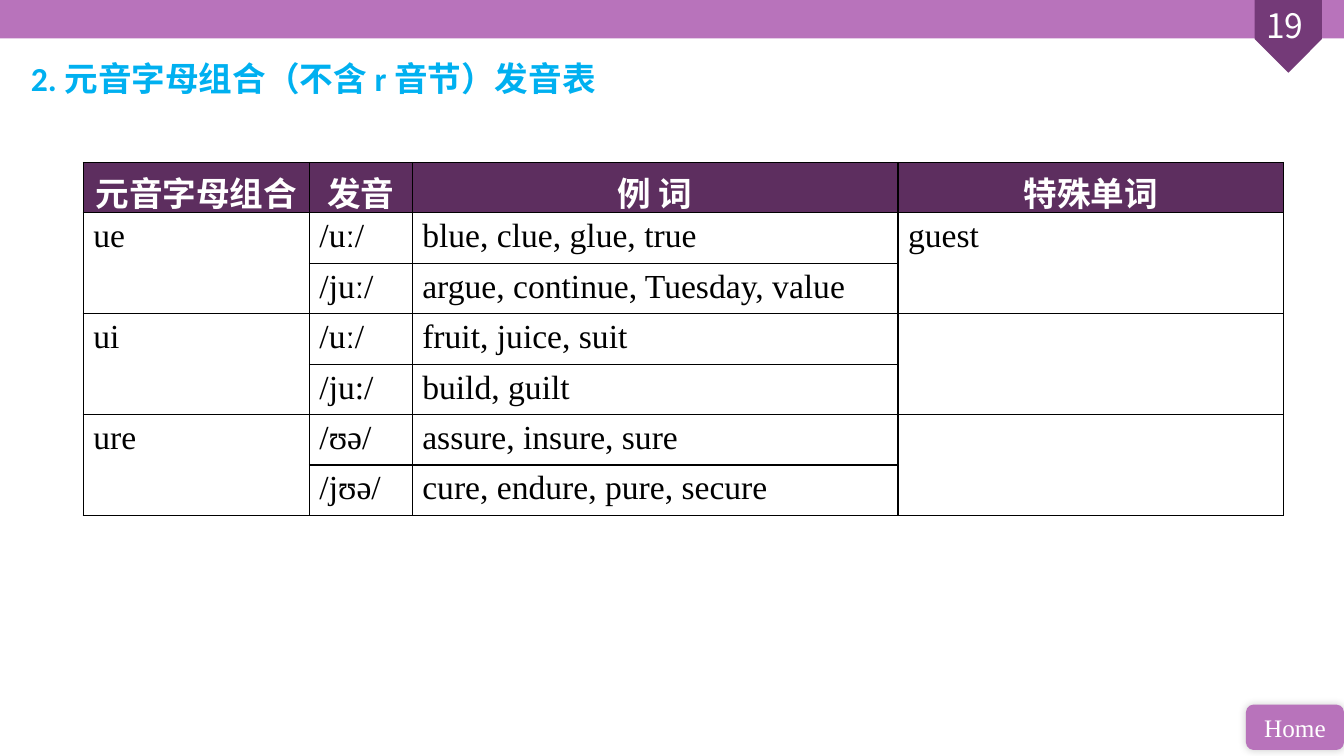
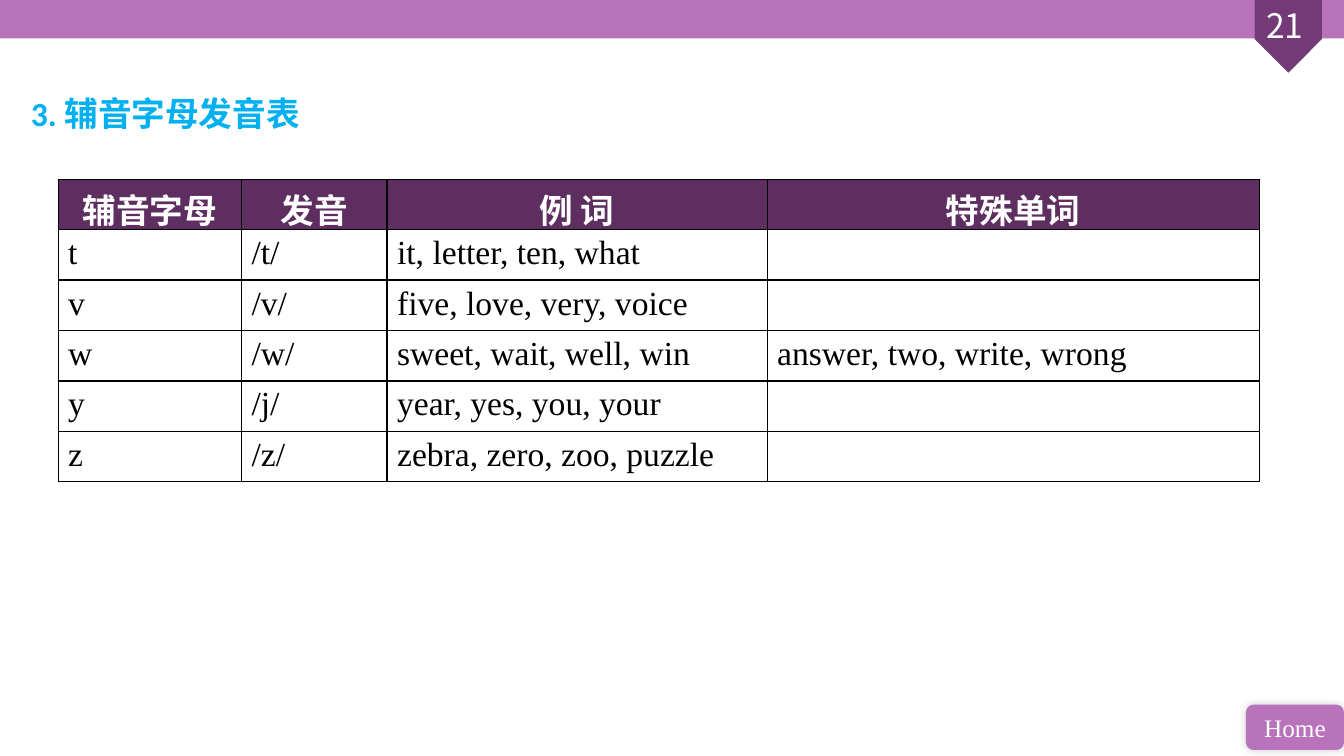
from dataclasses import dataclass

from lxml.etree import SubElement
from pptx import Presentation
from pptx.dml.color import RGBColor
from pptx.enum.shapes import MSO_SHAPE
from pptx.enum.text import MSO_ANCHOR, PP_ALIGN
from pptx.oxml.ns import qn
from pptx.shapes.autoshape import Shape
from pptx.slide import Slide
from pptx.table import _Cell
from pptx.text.text import TextFrame
from pptx.util import Pt

COLORS = {
    "band": "B873BB",
    "marker": "743A78",
    "header": "5D2E5F",
    "title": "00B0F0",
    "white": "FFFFFF",
    "black": "000000",
}
SERIF = "Times New Roman"
SANS = "Calibri"
CHINESE = "Noto Sans CJK SC"
ROW_HEIGHT = 36
MERGED = None  # the cell belongs to the one above it


@dataclass(frozen=True)
class SoundPage:
    number: str
    title: str
    title_top: float
    table_left: float
    table_top: float
    column_widths: tuple[float, ...]
    rows: tuple[tuple[str | None, ...], ...]


PAGES = (
    SoundPage(
        "19", "2. 元音字母组合（不含 r 音节）发音表", 38, 59.5, 116,
        (161.5, 73.5, 347, 275.5),
        (
            ("元音字母组合", "发音", "例 词", "特殊单词"),
            ("ue", "/uː/", "blue, clue, glue, true", "guest"),
            (MERGED, "/juː/", "argue, continue, Tuesday, value", MERGED),
            ("ui", "/uː/", "fruit, juice, suit", ""),
            (MERGED, "/ju:/", "build, guilt", MERGED),
            ("ure", "/ʊə/", "assure, insure, sure", ""),
            (MERGED, "/jʊə/", "cure, endure, pure, secure", MERGED),
        ),
    ),
    SoundPage(
        "21", "3. 辅音字母发音表", 62.5, 41.5, 128,
        (131, 104, 271.5, 351.5),
        (
            ("辅音字母", "发音", "例 词", "特殊单词"),
            ("t", "/t/", "it, letter, ten, what", ""),
            ("v", "/v/", "five, love, very, voice", ""),
            ("w", "/w/", "sweet, wait, well, win", "answer, two, write, wrong"),
            ("y", "/j/", "year, yes, you, your", ""),
            ("z", "/z/", "zebra, zero, zoo, puzzle", ""),
        ),
    ),
)


def rgb(color: str) -> RGBColor:
    return RGBColor.from_string(COLORS[color])


def write(frame: TextFrame, text: str, color: str, font: str = SERIF, size: float = 24,
          bold: bool = False, align: PP_ALIGN = PP_ALIGN.LEFT) -> None:
    frame.text = text
    para = frame.paragraphs[0]
    para.alignment = align
    for span in para.runs:
        span.font.name = font
        span.font.size = Pt(size)
        span.font.bold = bold
        span.font.color.rgb = rgb(color)
        east_asian = SubElement(span.font._element, qn("a:ea"))
        east_asian.set("typeface", CHINESE)


def add_block(page: Slide, kind: MSO_SHAPE, color: str, left: float, top: float,
              width: float, height: float) -> Shape:
    block = page.shapes.add_shape(kind, Pt(left), Pt(top), Pt(width), Pt(height))
    block.fill.solid()
    block.fill.fore_color.rgb = rgb(color)
    block.line.fill.background()
    block.shadow.inherit = False
    return block


def add_text_box(page: Slide, left: float, top: float, width: float) -> TextFrame:
    frame = page.shapes.add_textbox(Pt(left), Pt(top), Pt(width), Pt(36)).text_frame
    frame.word_wrap = True
    return frame


def add_soft_shadow(block: Shape) -> None:
    effects = block._element.spPr.find(qn("a:effectLst"))
    shadow = SubElement(effects, qn("a:outerShdw"), blurRad=str(Pt(6)), dist="0",
                        dir=str(315 * 60000), rotWithShape="0")
    tint = SubElement(shadow, qn("a:srgbClr"), val=COLORS["black"])
    SubElement(tint, qn("a:alpha"), val="20000")


def add_frame(page: Slide, number: str) -> None:
    """Draw the top band, the page marker and the Home button."""
    add_block(page, MSO_SHAPE.RECTANGLE, "band", 0, 0, 960, 27.4)
    marker = add_block(page, MSO_SHAPE.PENTAGON, "marker", 894.2, 2, 52, 48)
    marker.rotation = 90
    write(add_text_box(page, 882.5, 0, 70.5), number, "white", CHINESE,
          align=PP_ALIGN.CENTER)
    button = add_block(page, MSO_SHAPE.ROUNDED_RECTANGLE, "band", 890, 503.3, 70, 32.4)
    add_soft_shadow(button)
    button.text_frame.vertical_anchor = MSO_ANCHOR.MIDDLE
    write(button.text_frame, "Home", "white", size=18, align=PP_ALIGN.CENTER)


def add_borders(cell: _Cell) -> None:
    properties = cell._tc.get_or_add_tcPr()
    for index, side in enumerate(("lnL", "lnR", "lnT", "lnB")):
        line = SubElement(properties, qn(f"a:{side}"), w=str(Pt(1)))
        fill = SubElement(line, qn("a:solidFill"))
        SubElement(fill, qn("a:srgbClr"), val=COLORS["black"])
        properties.insert(index, line)


def format_cell(cell: _Cell, text: str, is_header: bool) -> None:
    if is_header:
        cell.fill.solid()
        cell.fill.fore_color.rgb = rgb("header")
        cell.vertical_anchor = MSO_ANCHOR.MIDDLE
        cell.margin_bottom = 0
        write(cell.text_frame, text, "white", bold=True, align=PP_ALIGN.CENTER)
    else:
        cell.fill.background()
        write(cell.text_frame, text, "black")
    add_borders(cell)


def add_sound_table(page: Slide, content: SoundPage) -> None:
    rows, widths = content.rows, content.column_widths
    table = page.shapes.add_table(
        len(rows), len(widths), Pt(content.table_left), Pt(content.table_top),
        Pt(sum(widths)), Pt(ROW_HEIGHT * len(rows))).table
    for column, width in zip(table.columns, widths):
        column.width = Pt(width)
    for row_index, texts in enumerate(rows):
        table.rows[row_index].height = Pt(ROW_HEIGHT)
        for column_index, text in enumerate(texts):
            cell = table.cell(row_index, column_index)
            format_cell(cell, text or "", row_index == 0)
            if text is MERGED:
                table.cell(row_index - 1, column_index).merge(cell)


def main() -> None:
    deck = Presentation()
    deck.slide_width, deck.slide_height = Pt(960), Pt(540)
    for content in PAGES:
        page = deck.slides.add_slide(deck.slide_layouts[6])
        add_frame(page, content.number)
        write(add_text_box(page, 15, content.title_top, 883.5), content.title, "title",
              SANS, bold=True)
        add_sound_table(page, content)
    deck.save("out.pptx")


if __name__ == "__main__":
    main()
